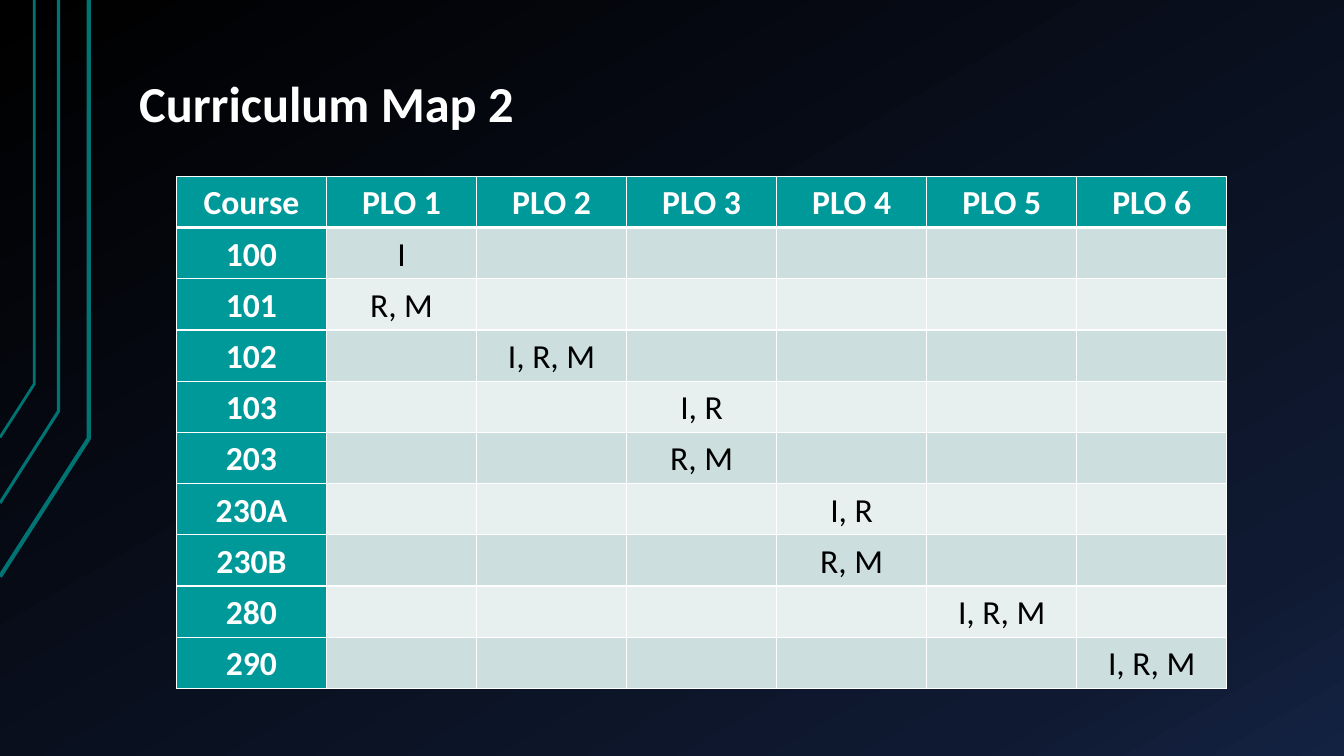
from copy import deepcopy

from lxml import etree
from pptx import Presentation
from pptx import util as u
from pptx.dml.color import RGBColor
from pptx.enum import text
from pptx.oxml import ns

TITLE = "Curriculum Map 2"
HEADER = ["Course"] + [f"PLO {number}" for number in range(1, 7)]
COURSES = [
    ("100", 1, "I"),
    ("101", 1, "R, M"),
    ("102", 2, "I, R, M"),
    ("103", 3, "I, R"),
    ("203", 3, "R, M"),
    ("230A", 4, "I, R"),
    ("230B", 4, "R, M"),
    ("280", 5, "I, R, M"),
    ("290", 6, "I, R, M"),
]
RAILS = [
    ([(0, 5.72), (0.88, 4.35), (0.88, 0)], 3),
    ([(0, 4.99), (0.58, 4.08), (0.58, 0)], 2.25),
    ([(0, 4.34), (0.34, 3.81), (0.34, 0)], 2),
]

FONT = "Calibri"
WHITE = RGBColor(0xFF, 0xFF, 0xFF)
BLACK = RGBColor(0x00, 0x00, 0x00)
TEAL = RGBColor(0x00, 0x99, 0x99)
DARK_TEAL = RGBColor(0x00, 0x73, 0x73)
BANDS = [RGBColor(0xCC, 0xDE, 0xDE), RGBColor(0xE7, 0xEF, 0xEF)]
NIGHT = [(0, BLACK), (0.85, RGBColor(0x0F, 0x19, 0x31)), (1, RGBColor(0x14, 0x22, 0x42))]

TABLE_WIDTH = u.Inches(10.42)
TABLE_HEIGHT = u.Inches(5.08)


def paint_background(page):
    fill = page.background.fill
    fill.gradient()
    fill.gradient_angle = 300
    stop_list = next(page.element.iter(ns.qn("a:gsLst")))
    stop_list.append(deepcopy(stop_list[0]))
    for stop, (position, color) in zip(fill.gradient_stops, NIGHT):
        stop.position = position
        stop.color.rgb = color


def draw_rail(page, points, weight):
    corners = [(u.Inches(x), u.Inches(y)) for x, y in points]
    builder = page.shapes.build_freeform(*corners[0])
    builder.add_line_segments(corners[1:], close=False)
    rail = builder.convert_to_shape()
    rail.shadow.inherit = False
    rail.fill.background()
    rail.line.color.rgb = DARK_TEAL
    rail.line.width = u.Pt(weight)


def write(para, words, size, color, bold):
    span = para.add_run()
    span.text = words
    span.font.name = FONT
    span.font.size = u.Pt(size)
    span.font.bold = bold
    span.font.color.rgb = color


def add_title(page):
    box = page.shapes.title
    box.left, box.top = u.Inches(1.25), u.Inches(0.58)
    box.width, box.height = u.Inches(11.33), u.Inches(0.81)
    frame = box.text_frame
    frame.auto_size = text.MSO_AUTO_SIZE.NONE
    frame.vertical_anchor = text.MSO_ANCHOR.BOTTOM
    frame.margin_left = frame.margin_right = u.Inches(0.13)
    frame.margin_top = frame.margin_bottom = u.Inches(0.07)
    para = frame.paragraphs[0]
    para.alignment = text.PP_ALIGN.LEFT
    para.line_spacing = 0.9
    write(para, TITLE, 36, WHITE, True)


def set_borders(cell, row):
    properties = cell._tc.get_or_add_tcPr()
    weights = {"L": 1, "R": 1, "T": 1, "B": 3 if row == 0 else 1}
    if row == 1:
        del weights["T"]
    for side, weight in weights.items():
        line = etree.SubElement(properties, ns.qn(f"a:ln{side}"), w=str(u.Pt(weight)))
        solid = etree.SubElement(line, ns.qn("a:solidFill"))
        etree.SubElement(solid, ns.qn("a:srgbClr"), val=str(WHITE))


def fill_cell(cell, row, column, words):
    heading = row == 0 or column == 0
    set_borders(cell, row)
    cell.fill.solid()
    cell.fill.fore_color.rgb = TEAL if heading else BANDS[(row - 1) % 2]
    cell.margin_left = cell.margin_right = u.Inches(0.07)
    cell.margin_top = cell.margin_bottom = 0
    cell.vertical_anchor = text.MSO_ANCHOR.MIDDLE
    if words:
        para = cell.text_frame.paragraphs[0]
        para.alignment = text.PP_ALIGN.CENTER
        para.line_spacing = 1.07
        write(para, words, 24, WHITE if heading else BLACK, heading)


def add_map(page):
    rows = [HEADER]
    for course, outcome, levels in COURSES:
        rows.append([course] + [levels if column == outcome else ""
                                for column in range(1, len(HEADER))])
    table = page.shapes.add_table(
        len(rows), len(HEADER), u.Inches(1.75), u.Inches(1.75),
        TABLE_WIDTH, TABLE_HEIGHT).table
    for row, values in enumerate(rows):
        for column, words in enumerate(values):
            fill_cell(table.cell(row, column), row, column, words)


def main():
    deck = Presentation()
    deck.slide_width, deck.slide_height = u.Inches(13.33), u.Inches(7.5)
    page = deck.slides.add_slide(deck.slide_layouts[5])
    paint_background(page)
    for points, weight in RAILS:
        draw_rail(page, points, weight)
    add_map(page)
    add_title(page)
    deck.save("out.pptx")


if __name__ == "__main__":
    main()
